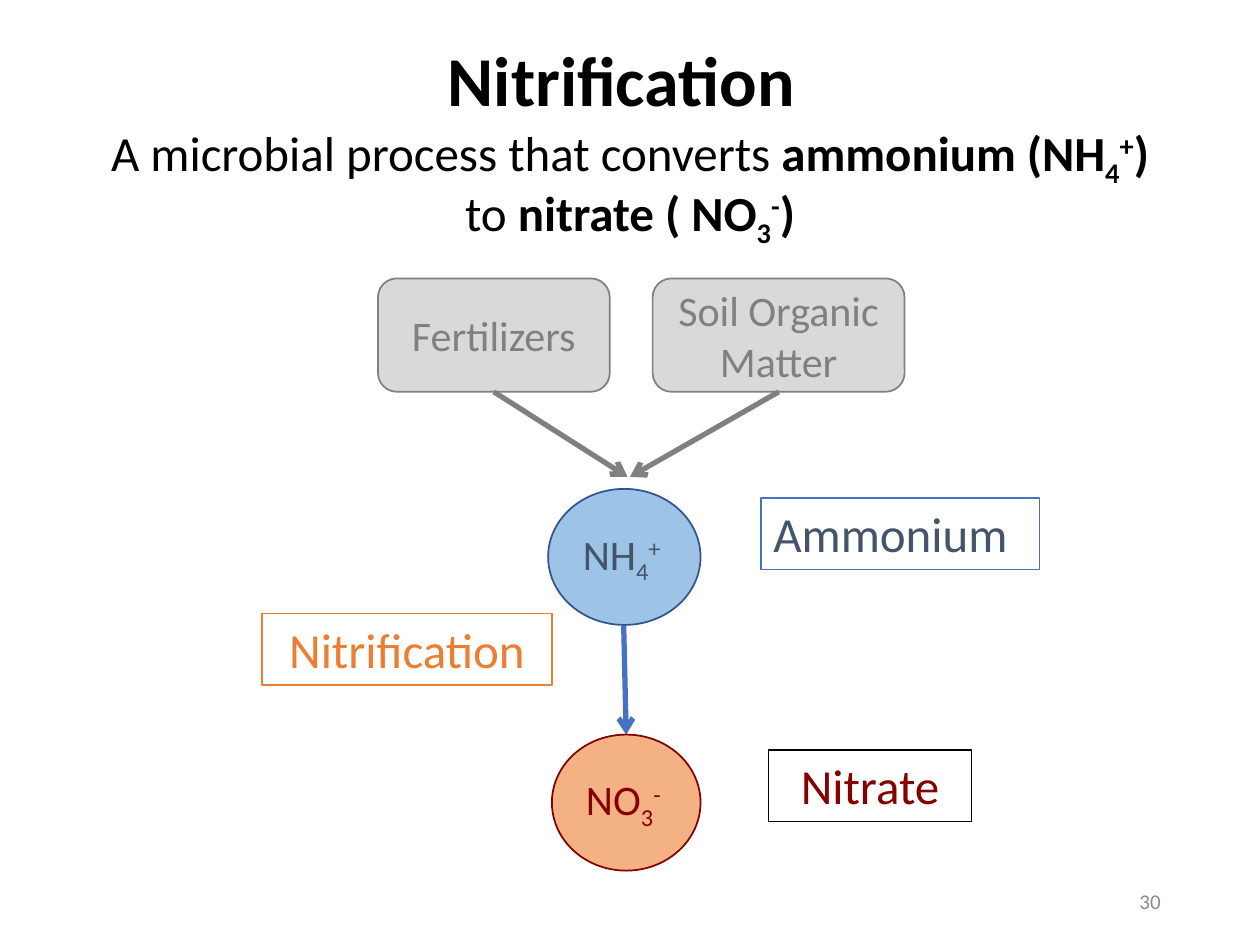
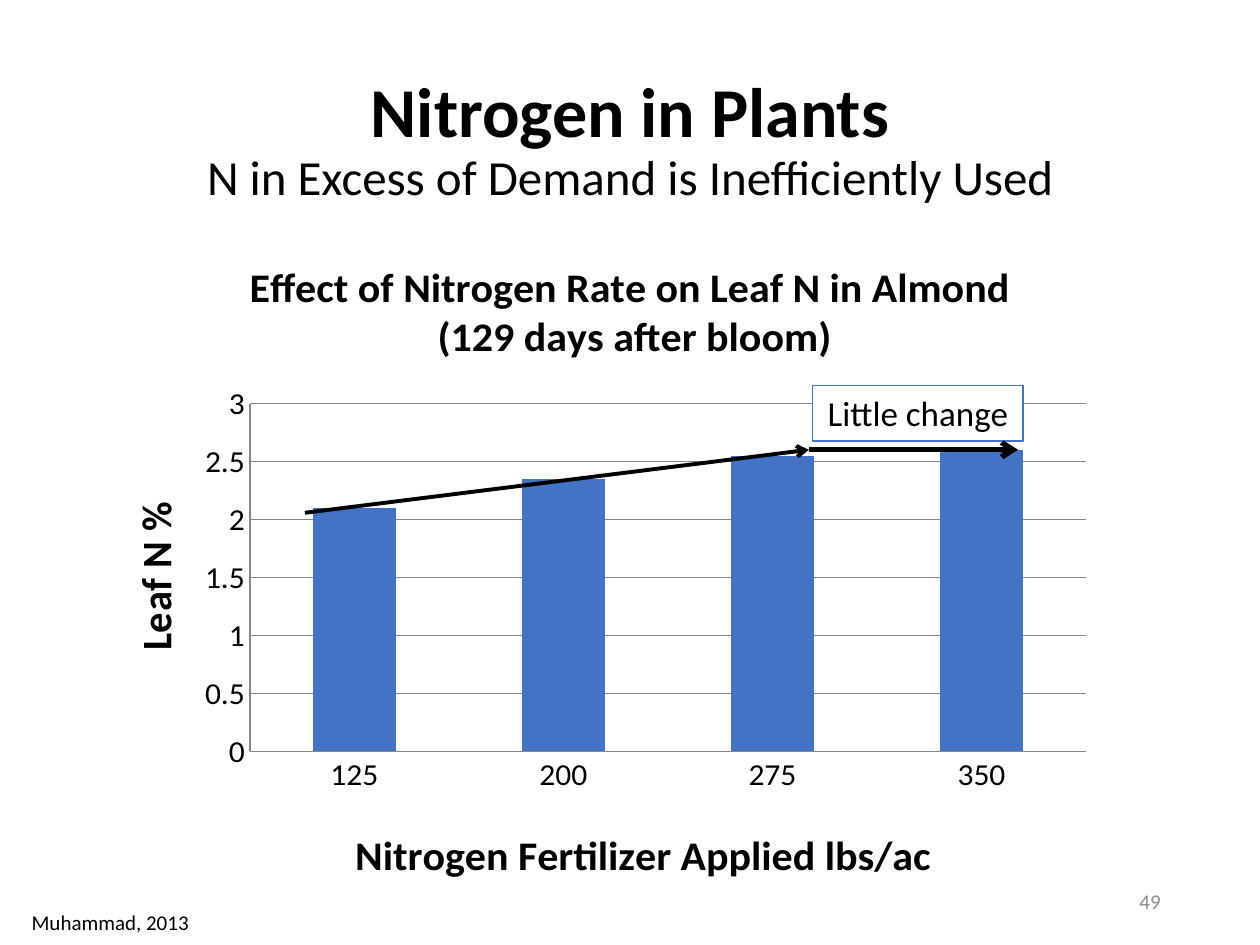
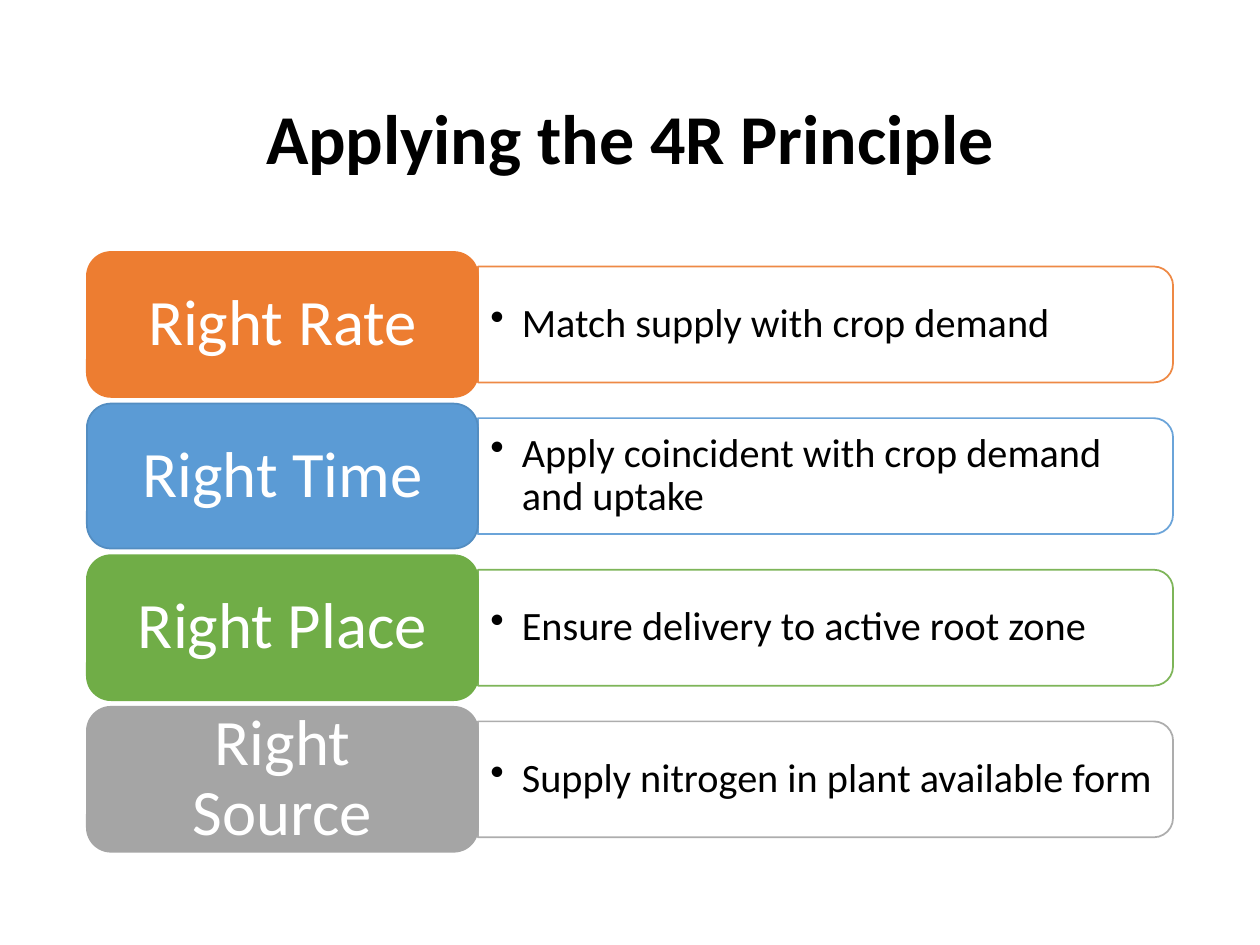
import dataclasses

import lxml.etree
import pptx
import pptx.chart.data
import pptx.dml.color
import pptx.enum.chart
import pptx.enum.shapes
import pptx.enum.text
import pptx.oxml.ns
import pptx.util

RGBColor = pptx.dml.color.RGBColor
ShapeType = pptx.enum.shapes.MSO_SHAPE
Align = pptx.enum.text.PP_ALIGN
Anchor = pptx.enum.text.MSO_ANCHOR
qualified = pptx.oxml.ns.qn

FONT = "Calibri"
BLACK = RGBColor(0x00, 0x00, 0x00)
WHITE = RGBColor(0xFF, 0xFF, 0xFF)
PAGE_GREY = RGBColor(0x8C, 0x8C, 0x8C)
GRID_GREY = RGBColor(0x86, 0x86, 0x86)
SOURCE_GREY = RGBColor(0x80, 0x80, 0x80)
SOURCE_FILL = RGBColor(0xD9, 0xD9, 0xD9)
BLUE = RGBColor(0x44, 0x72, 0xC4)
ORANGE = RGBColor(0xED, 0x7D, 0x31)
SKY = RGBColor(0x5B, 0x9B, 0xD5)
SKY_EDGE = RGBColor(0x53, 0x8D, 0xC1)
GREEN = RGBColor(0x70, 0xAD, 0x47)
GREY = RGBColor(0xA5, 0xA5, 0xA5)
SLATE = RGBColor(0x44, 0x54, 0x6A)
DARK_RED = RGBColor(0x86, 0x00, 0x00)
AMMONIUM_FILL = RGBColor(0x9D, 0xC3, 0xE6)
AMMONIUM_EDGE = RGBColor(0x32, 0x54, 0x91)
NITRATE_FILL = RGBColor(0xF4, 0xB1, 0x83)

SLIDE_WIDTH = pptx.util.Inches(10)
SLIDE_HEIGHT = pptx.util.Inches(7.5)
COLUMN = SLIDE_WIDTH / 100
ROW = SLIDE_HEIGHT / 75

SUBSCRIPT = {"baseline": -25}
SUPERSCRIPT = {"baseline": 30}


@dataclasses.dataclass
class Box:
    left: float
    top: float
    width: float
    height: float

    def inner(self, left, top, width, height):
        return Box(self.left + left, self.top + top, width, height)

    def point(self, left, top):
        return self.left + left, self.top + top

    def lengths(self):
        return (round(self.left * COLUMN), round(self.top * ROW),
                round(self.width * COLUMN), round(self.height * ROW))


TITLE_BOX = Box(6.9, 4, 86.2, 14.5)
PAGE_NUMBER_BOX = Box(70.6, 69.5, 22.5, 4)
CITATION_BOX = Box(0, 71.3, 17.5, 3.7)
FLOW_BOX = Box(20.8, 22.1, 61.7, 47)
CHART_BOX = Box(6.9, 19, 86.2, 52)
PRINCIPLES_BOX = Box(6.9, 20, 86.2, 47.6)


def write_text(shape, content, size=18, color=BLACK, bold=False, align=Align.LEFT,
               anchor=Anchor.MIDDLE, line_spacing=None, margins=(0.1, 0.05), bullet=None):
    frame = shape.text_frame
    frame.word_wrap = True
    frame.vertical_anchor = anchor
    frame.margin_left = frame.margin_right = pptx.util.Inches(margins[0])
    frame.margin_top = frame.margin_bottom = pptx.util.Inches(margins[1])
    paragraph = frame.paragraphs[0]
    paragraph.alignment = align
    if line_spacing:
        paragraph.line_spacing = line_spacing
    if bullet:
        properties = paragraph._p.get_or_add_pPr()
        indent = pptx.util.Inches(0.25)
        properties.set("marL", str(indent))
        properties.set("indent", str(-indent))
        lxml.etree.SubElement(properties, qualified("a:buChar")).set("char", bullet)
    runs = [(content, {})] if isinstance(content, str) else content
    for text, changes in runs:
        if text == "\n":
            paragraph.add_line_break()
            continue
        run = paragraph.add_run()
        run.text = text
        run.font.name = FONT
        run.font.size = pptx.util.Pt(changes.get("size", size))
        run.font.bold = changes.get("bold", bold)
        run.font.color.rgb = color
        if "baseline" in changes:
            run._r.get_or_add_rPr().set("baseline", str(changes["baseline"] * 1000))


def add_text(slide, box, content, **text_format):
    write_text(slide.shapes.add_textbox(*box.lengths()), content, **text_format)


def add_shape(slide, kind, box, fill, edge, edge_width=1):
    shape = slide.shapes.add_shape(kind, *box.lengths())
    shape.shadow.inherit = False
    shape.fill.solid()
    shape.fill.fore_color.rgb = fill
    shape.line.color.rgb = edge
    shape.line.width = pptx.util.Pt(edge_width)
    return shape


def add_label(slide, box, text, color, edge, edge_width=1, size=28, align=Align.CENTER):
    label = add_shape(slide, ShapeType.RECTANGLE, box, WHITE, edge, edge_width)
    write_text(label, text, size=size, color=color, align=align, anchor=Anchor.TOP)


def add_arrow(slide, start, end, color, width=3, source=None):
    ends = [round(length * unit) for point in (start, end)
            for length, unit in zip(point, (COLUMN, ROW))]
    arrow = slide.shapes.add_connector(pptx.enum.shapes.MSO_CONNECTOR.STRAIGHT, *ends)
    if source is not None:
        arrow.begin_connect(source, 2)
    arrow.line.color.rgb = color
    arrow.line.width = pptx.util.Pt(width)
    lxml.etree.SubElement(arrow.line._get_or_add_ln(), qualified("a:tailEnd")).set("type", "arrow")
    lxml.etree.SubElement(arrow._element.spPr, qualified("a:effectLst"))


def add_slide(presentation, title, page_number=None):
    slide = presentation.slides.add_slide(presentation.slide_layouts[6])
    add_text(slide, TITLE_BOX, title, size=40, bold=True, align=Align.CENTER, line_spacing=0.9)
    if page_number:
        add_text(slide, PAGE_NUMBER_BOX, page_number, size=12, color=PAGE_GREY, align=Align.RIGHT)
    return slide


def draw_nitrification_flow(slide, box):
    sources = (("Fertilizers", 9.2, 18.4, 29), ("Soil Organic Matter", 31, 20, 29.2))
    for name, left, width, arrow_end in sources:
        source = add_shape(slide, ShapeType.ROUNDED_RECTANGLE, box.inner(left, 0, width, 9),
                           SOURCE_FILL, SOURCE_GREY)
        write_text(source, name, size=24, color=SOURCE_GREY, align=Align.CENTER)
        add_arrow(slide, box.point(left + width / 2, 9), box.point(arrow_end, 15.75),
                  SOURCE_GREY, source=source)
    add_arrow(slide, box.point(28.7, 27.6), box.point(28.9, 36.2), BLUE)
    ions = (
        ("NH", "4", "+", 22.7, 16.7, 12.1, AMMONIUM_FILL, AMMONIUM_EDGE, SLATE),
        ("NO", "3", "-", 23, 36.2, 11.8, NITRATE_FILL, DARK_RED, DARK_RED),
    )
    for symbol, count, charge, left, top, width, fill, edge, color in ions:
        ion = add_shape(slide, ShapeType.OVAL, box.inner(left, top, width, 10.8), fill, edge)
        write_text(ion, [(symbol, {}), (count, SUBSCRIPT), (charge, SUPERSCRIPT)],
                   size=24, color=color)
    labels = (
        ("Nitrification", 0, 26.6, 23, ORANGE, ORANGE, Align.CENTER),
        ("Ammonium", 39.6, 17.4, 22.1, SLATE, BLUE, Align.LEFT),
        ("Nitrate", 40.2, 37.4, 16.1, DARK_RED, BLACK, Align.CENTER),
    )
    for text, left, top, width, color, edge, align in labels:
        add_label(slide, box.inner(left, top, width, 5.7), text, color, edge, align=align)


def place_manually(element, **shares):
    layout = element.find(qualified("c:layout"))
    if layout is None:
        layout = lxml.etree.Element(qualified("c:layout"))
        element.insert(0, layout)
    manual = lxml.etree.SubElement(layout, qualified("c:manualLayout"))
    if "w" in shares:
        lxml.etree.SubElement(manual, qualified("c:layoutTarget")).set("val", "inner")
    for name in ("x", "y"):
        lxml.etree.SubElement(manual, qualified(f"c:{name}Mode")).set("val", "edge")
    for name, share in shares.items():
        lxml.etree.SubElement(manual, qualified(f"c:{name}")).set("val", str(share))


def write_chart_title(title, lines):
    frame = title.text_frame
    for index, line in enumerate(lines):
        paragraph = frame.add_paragraph() if index else frame.paragraphs[0]
        run = paragraph.add_run()
        run.text = line
        run.font.name = FONT
        run.font.size = pptx.util.Pt(24)
        run.font.bold = True
        run.font.color.rgb = BLACK


def draw_leaf_chart(slide, box):
    data = pptx.chart.data.CategoryChartData()
    data.categories = ["125", "200", "275", "350"]
    data.add_series("Series 1", (2.1, 2.35, 2.55, 2.6))
    kind = pptx.enum.chart.XL_CHART_TYPE.COLUMN_CLUSTERED
    chart = slide.shapes.add_chart(kind, *box.lengths(), data).chart
    chart.has_legend = False
    chart.font.name = FONT
    chart.font.size = pptx.util.Pt(10)
    chart.font.color.rgb = BLACK
    chart.has_title = True
    write_chart_title(chart.chart_title, ("Effect of Nitrogen Rate on Leaf N in Almond",
                                          " (129 days after bloom)"))
    place_manually(chart._chartSpace.chart.plotArea, x=0.15, y=0.26, w=0.77, h=0.55)

    plot = chart.plots[0]
    plot.gap_width = 150
    plot.vary_by_categories = False
    fill = plot.series[0].format.fill
    fill.solid()
    fill.fore_color.rgb = BLUE

    axes = ((chart.category_axis, "Nitrogen Fertilizer Applied lbs/ac", 0.24, 0.92),
            (chart.value_axis, "Leaf N %", 0.03, 0.41))
    for axis, name, left, top in axes:
        write_chart_title(axis.axis_title, (name,))
        place_manually(axis.axis_title._element, x=left, y=top)
        axis.major_tick_mark = pptx.enum.chart.XL_TICK_MARK.NONE
        axis.tick_labels.font.size = pptx.util.Pt(18)
        axis.format.line.color.rgb = GRID_GREY
    value_axis = chart.value_axis
    value_axis.minimum_scale = 0
    value_axis.maximum_scale = 3
    value_axis.major_unit = 0.5
    value_axis.tick_labels.number_format = "General"
    value_axis.tick_labels.number_format_is_linked = False
    value_axis.major_gridlines.format.line.color.rgb = GRID_GREY

    turning_point = box.point(57.3, 16.7)
    add_arrow(slide, box.point(17.3, 21.7), turning_point, BLACK, width=2.25)
    add_label(slide, box.inner(57.6, 11.6, 16.7, 4.4), "Little change", BLACK, BLUE,
              edge_width=0.75, size=20)
    add_arrow(slide, turning_point, box.point(73.9, 16.7), BLACK)


def draw_principle(slide, box, name, advice, color, edge):
    label_width = box.width * 0.36
    panel_width = box.width - label_width
    panel_height = box.height * 0.8
    panel_box = box.inner(label_width, box.height * 0.1, panel_width, panel_height)
    upright_box = panel_box.inner((panel_width - panel_height) / 2,
                                  (panel_height - panel_width) / 2, panel_height, panel_width)
    panel = add_shape(slide, ShapeType.ROUND_2_SAME_RECTANGLE, upright_box, WHITE, color)
    panel.rotation = 90
    for paint in panel._element.spPr.iter(qualified("a:srgbClr")):
        lxml.etree.SubElement(paint, qualified("a:alpha")).set("val", "90000")
    add_text(slide, panel_box, advice, size=23, line_spacing=0.9, bullet="•")
    label = add_shape(slide, ShapeType.ROUNDED_RECTANGLE,
                      box.inner(0, 0, label_width, box.height), color, edge)
    write_text(label, name, size=37, color=WHITE, align=Align.CENTER, line_spacing=0.9,
               margins=(0.2, 0.13))


def draw_principles(slide, box):
    principles = (
        ("Right Rate", "Match supply with crop demand", ORANGE, ORANGE),
        ("Right Time", "Apply coincident with crop demand and uptake", SKY, SKY_EDGE),
        ("Right Place", "Ensure delivery to active root zone", GREEN, GREEN),
        ("Right Source", "Supply nitrogen in plant available form", GREY, GREY),
    )
    row_height = 11.5
    pitch = (box.height - row_height) / (len(principles) - 1)
    for index, principle in enumerate(principles):
        draw_principle(slide, box.inner(0, index * pitch, box.width, row_height), *principle)


def main():
    presentation = pptx.Presentation()
    presentation.slide_width = SLIDE_WIDTH
    presentation.slide_height = SLIDE_HEIGHT
    plain = {"size": 28, "bold": False}
    strong = {"size": 28}

    nitrification = add_slide(presentation, [
        ("Nitrification", {}), (" ", {"size": 44}), ("\n", {}),
        ("A microbial process that converts ", plain),
        ("ammonium (NH", strong), ("4", strong | SUBSCRIPT), ("+", strong | SUPERSCRIPT),
        (") ", strong), ("to ", plain),
        ("nitrate ( NO", strong), ("3", strong | SUBSCRIPT), ("-", strong | SUPERSCRIPT),
        (")", strong),
    ], "30")
    draw_nitrification_flow(nitrification, FLOW_BOX)

    plants = add_slide(presentation, [
        ("Nitrogen in Plants", {}), ("\n", {}),
        ("N in Excess of Demand is Inefficiently Used", plain),
    ], "49")
    draw_leaf_chart(plants, CHART_BOX)
    add_text(plants, CITATION_BOX, "Muhammad, 2013", size=12, align=Align.CENTER)

    draw_principles(add_slide(presentation, "Applying the 4R Principle"), PRINCIPLES_BOX)
    presentation.save("out.pptx")


if __name__ == "__main__":
    main()
